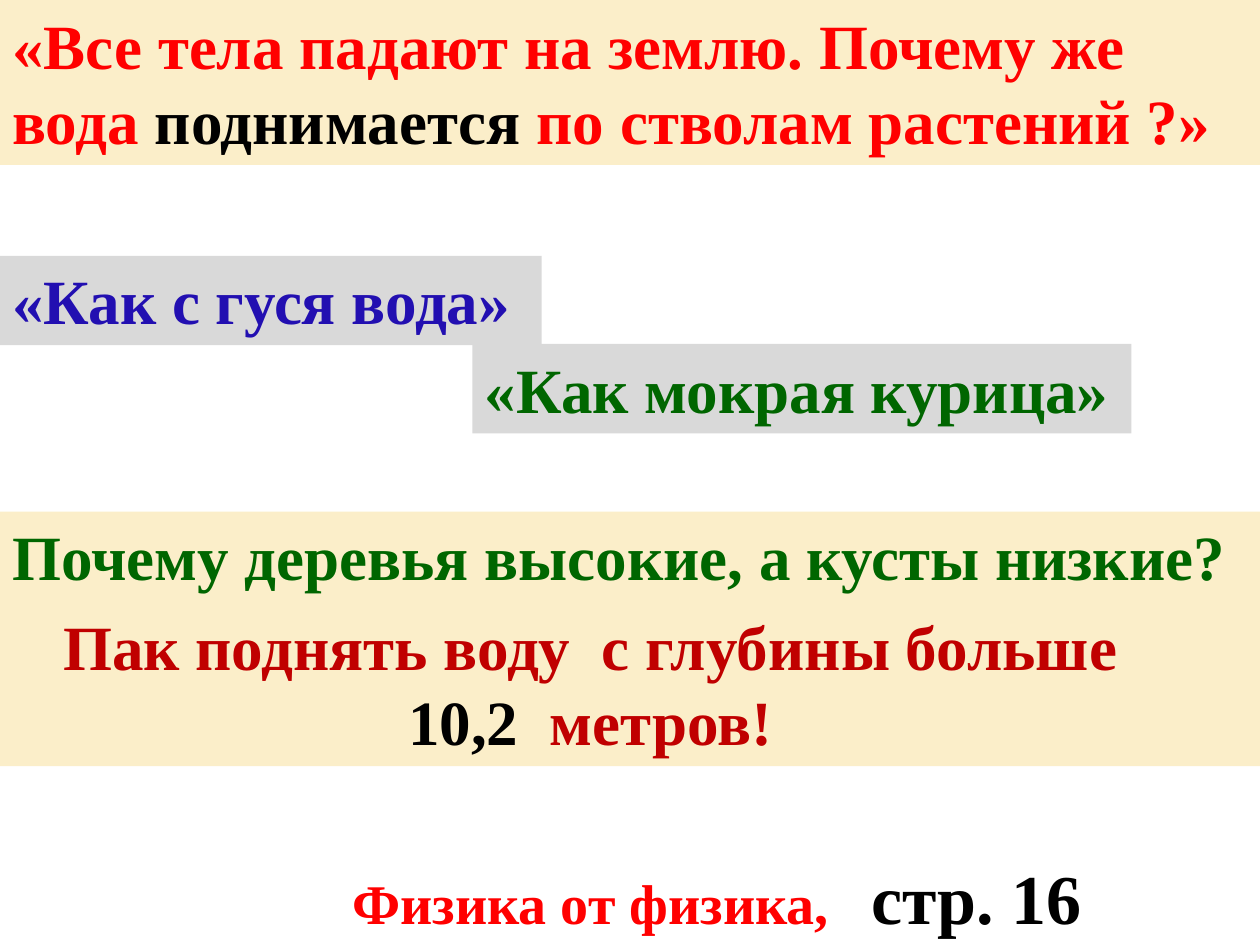
from lxml import etree
from pptx import Presentation
from pptx import util as u
from pptx.dml.color import RGBColor
from pptx.enum import shapes, text
from pptx.oxml.ns import qn

THEME = {
    "font": "Times New Roman",
    "cream": "FBEEC9", "grey": "D9D9D9",
    "red": "FF0000", "black": "000000", "blue": "220FB1",
    "green": "006600", "crimson": "C00000", "outline": "AD5700",
    "body": 36, "source": 32, "page": 40, "outline_pt": 2.5,
}
LEFT, CENTER = text.PP_ALIGN.LEFT, text.PP_ALIGN.CENTER

# Content: place, fill, alignment, right indent of first paragraph,
# then paragraphs of (text, colour, size) runs
BANDS = [
    ((0, 0, 10, 1.31), "cream", LEFT, 0, [[
        ("«Все тела падают на землю. Почему же вода ", "red", "body"),
        ("поднимается", "black", "body"),
        (" по стволам растений ?»", "red", "body")]]),
    ((0, 2.03, 4.3, 0.71), "grey", LEFT, 0, [[
        ("«Как с гуся вода»", "blue", "body")]]),
    ((3.75, 2.73, 5.23, 0.71), "grey", LEFT, 0, [[
        ("«Как мокрая курица»", "green", "body")]]),
    ((0, 4.06, 10, 0.71), "cream", LEFT, 0, [[
        ("Почему деревья высокие, а кусты низкие?", "green", "body")]]),
    ((0, 4.77, 10, 1.31), "cream", CENTER, 0.63, [
        [("Пак поднять воду  с глубины больше", "crimson", "body")],
        [("10,2", "black", "body"), ("  метров!", "crimson", "body")]]),
]
REFERENCE = ((1.38, 6.73, 8.62, 0.77), CENTER, [[
    ("Физика от физика,   ", "red", "source"),
    ("стр. 16", "black", "page")]])


def color(name):
    return RGBColor.from_string(THEME[name])


def write(sp, align, paragraphs):
    tf = sp.text_frame
    tf.word_wrap = True
    tf.auto_size = text.MSO_AUTO_SIZE.SHAPE_TO_FIT_TEXT
    tf.vertical_anchor = text.MSO_ANCHOR.TOP
    for i, runs in enumerate(paragraphs):
        p = tf.add_paragraph() if i else tf.paragraphs[0]
        p.alignment = align
        for words, ink, size in runs:
            r = p.add_run()
            r.text = words
            r.font.name, r.font.bold = THEME["font"], True
            r.font.size = u.Pt(THEME[size])
            r.font.color.rgb = color(ink)
    return tf


def outline(r):
    rPr = r.font._element
    ln = etree.Element(qn("a:ln"), w=str(u.Pt(THEME["outline_pt"])))
    fill = etree.SubElement(ln, qn("a:solidFill"))
    etree.SubElement(fill, qn("a:srgbClr"), val=THEME["outline"])
    rPr.insert(0, ln)


prs = Presentation()
prs.slide_width, prs.slide_height = u.Inches(10), u.Inches(7.5)
s = prs.slides.add_slide(prs.slide_layouts[6])

# Coloured bands with questions and sayings
for place, fill, align, indent, paragraphs in BANDS:
    sp = s.shapes.add_shape(shapes.MSO_SHAPE.RECTANGLE, *map(u.Inches, place))
    sp.shadow.inherit = False
    sp.fill.solid()
    sp.fill.fore_color.rgb = color(fill)
    sp.line.fill.background()
    tf = write(sp, align, paragraphs)
    if indent:
        tf.paragraphs[0]._p.get_or_add_pPr().set("marR", str(u.Inches(indent)))

# Book reference at the bottom
place, align, paragraphs = REFERENCE
tf = write(s.shapes.add_textbox(*map(u.Inches, place)), align, paragraphs)
for r in tf.paragraphs[0].runs:
    outline(r)

prs.save("out.pptx")
